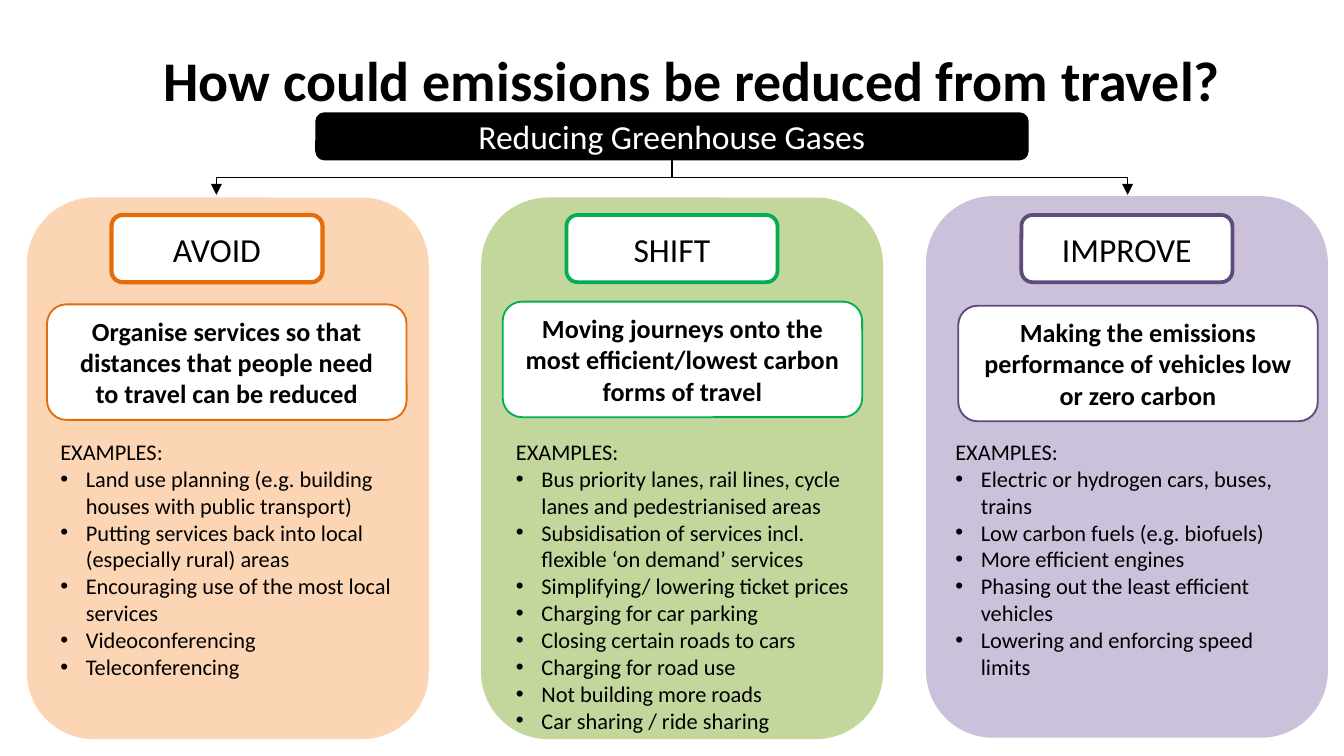
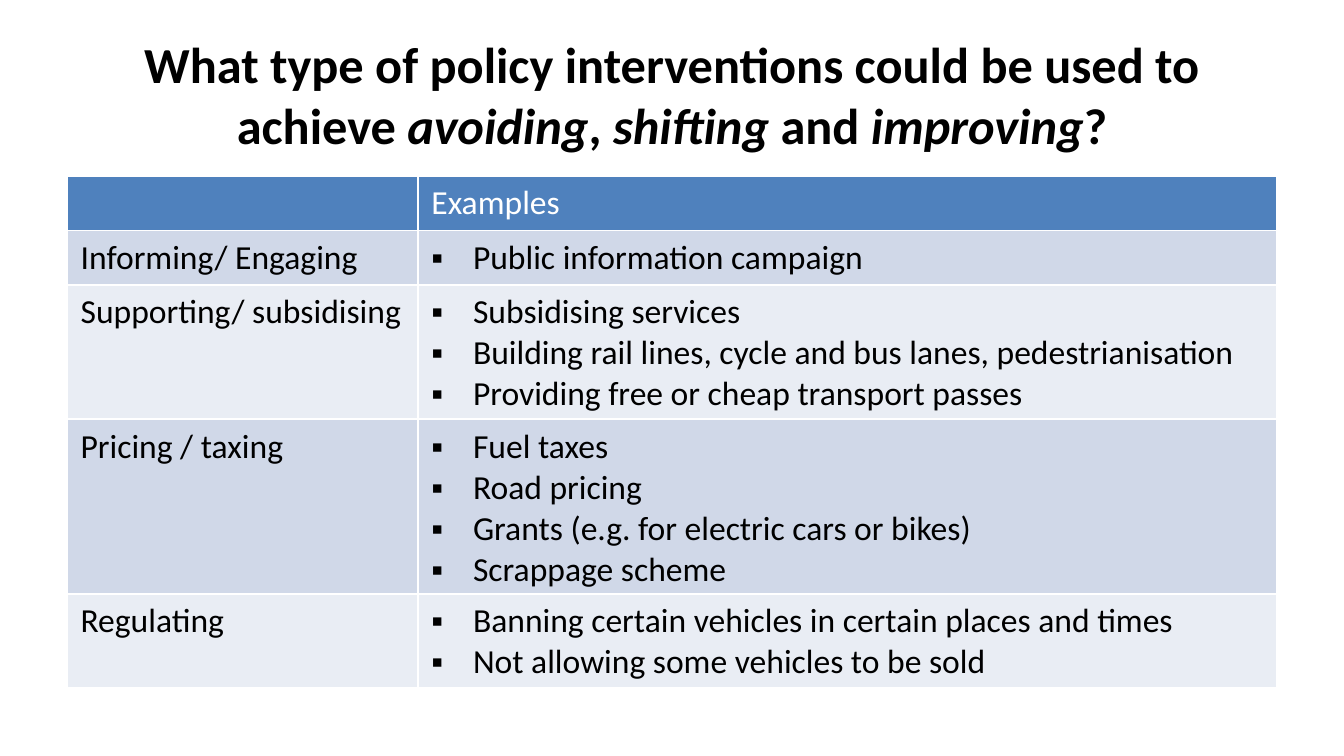
from dataclasses import dataclass

from lxml import etree
from pptx import Presentation
from pptx.dml.color import RGBColor
from pptx.enum.shapes import MSO_CONNECTOR, MSO_SHAPE
from pptx.enum.text import MSO_ANCHOR, MSO_AUTO_SIZE, PP_ALIGN
from pptx.oxml.ns import qn
from pptx.util import Emu, Pt

ROUNDED = MSO_SHAPE.ROUNDED_RECTANGLE
STRAIGHT = MSO_CONNECTOR.STRAIGHT
CENTER, LEFT = PP_ALIGN.CENTER, PP_ALIGN.LEFT
MIDDLE = MSO_ANCHOR.MIDDLE
GROW = MSO_AUTO_SIZE.SHAPE_TO_FIT_TEXT
BOTTOM_SIDE = 2

# Shared style: 200 px to the inch
EMU_PER_PX = 4572
PAGE_WIDTH, PAGE_HEIGHT = 2000, 1125
FONT = "Calibri"
BLACK, WHITE = "000000", "FFFFFF"
HEADER_BLUE = "4F81BD"
BAND_FILLS = ("D0D8E8", "E9EDF4")


@dataclass(frozen=True)
class Rect:
    left: int
    top: int
    width: int
    height: int

    def emu(self) -> tuple[Emu, ...]:
        return tuple(px(side) for side in (self.left, self.top, self.width, self.height))


@dataclass(frozen=True)
class TextStyle:
    size: float
    color: str = BLACK
    bold: bool = False
    align: PP_ALIGN = LEFT


@dataclass(frozen=True)
class Bullet:
    symbol: str
    indent: int


@dataclass(frozen=True)
class Strategy:
    name: str
    statement: str
    examples: tuple[str, ...]
    fill: str
    accent: str
    tag_line: float
    panel_left: int
    panel_top: int
    card_top: int
    examples_rect: Rect


@dataclass(frozen=True)
class Policy:
    kind: str
    examples: tuple[str, ...]


TAG_STYLE = TextStyle(18, align=CENTER)
BAR_STYLE = TextStyle(18, WHITE, align=CENTER)
CARD_STYLE = TextStyle(14, bold=True, align=CENTER)
EXAMPLE_STYLE = TextStyle(12)
CELL_STYLE = TextStyle(18)
HEADER_STYLE = TextStyle(18, WHITE)
DOT = Bullet("•", 38)
SQUARE = Bullet("▪", 62)

STRATEGIES = (
    Strategy(
        "AVOID",
        "Organise services so that distances that people need to travel can be reduced",
        ("Land use planning (e.g. building houses with public transport)",
         "Putting services back into local (especially rural) areas",
         "Encouraging use of the most local services",
         "Videoconferencing",
         "Teleconferencing"),
        "FCD5B5", "E46C0A", 2.25, 40, 294, 453, Rect(70, 642, 536, 384)),
    Strategy(
        "SHIFT",
        "Moving journeys onto the most efficient/lowest carbon forms of travel",
        ("Bus priority lanes, rail lines, cycle lanes and pedestrianised areas",
         "Subsidisation of services incl. flexible ‘on demand’ services",
         "Simplifying/ lowering ticket prices",
         "Charging for car parking",
         "Closing certain roads to cars",
         "Charging for road use",
         "Not building more roads",
         "Car sharing / ride sharing"),
        "C3D69B", "00B050", 2, 716, 294, 449, Rect(748, 642, 548, 464)),
    Strategy(
        "IMPROVE",
        "Making the emissions performance of vehicles low or zero carbon",
        ("Electric or hydrogen cars, buses, trains",
         "Low carbon fuels (e.g. biofuels)",
         "More efficient engines",
         "Phasing out the least efficient vehicles",
         "Lowering and enforcing speed limits"),
        "CCC1DA", "604A7B", 2, 1378, 292, 455, Rect(1402, 642, 548, 464)),
)

POLICIES = (
    Policy("Informing/ Engaging", ("Public information campaign",)),
    Policy("Supporting/ subsidising",
           ("Subsidising services",
            "Building rail lines, cycle and bus lanes, pedestrianisation",
            "Providing free or cheap transport passes")),
    Policy("Pricing / taxing",
           ("Fuel taxes", "Road pricing", "Grants (e.g. for electric cars or bikes)",
            "Scrappage scheme")),
    Policy("Regulating",
           ("Banning certain vehicles in certain places and times",
            "Not allowing some vehicles to be sold")),
)


# Helpers
def px(length: int) -> Emu:
    return Emu(length * EMU_PER_PX)


def rgb(color: str) -> RGBColor:
    return RGBColor.from_string(color)


def fill_solid(target, color: str) -> None:
    target.fill.solid()
    target.fill.fore_color.rgb = rgb(color)


def style_paragraph(para, style: TextStyle, bullet: Bullet | None = None) -> None:
    if bullet:
        properties = para._p.get_or_add_pPr()
        properties.set("marL", str(px(bullet.indent)))
        properties.set("indent", str(-px(bullet.indent)))
        etree.SubElement(properties, qn("a:buFont"), typeface="Arial")
        etree.SubElement(properties, qn("a:buChar"), char=bullet.symbol)
    para.alignment = style.align
    para.font.name = FONT
    para.font.size = Pt(style.size)
    para.font.bold = style.bold
    para.font.color.rgb = rgb(style.color)


def write_lines(frame, lines: tuple[str, ...], style: TextStyle,
                bullet: Bullet | None = None, plain_lines: int = 0) -> None:
    """Fill a text frame; the first plain_lines paragraphs carry no bullet."""
    for index, line in enumerate(lines):
        para = frame.paragraphs[0] if index == 0 else frame.add_paragraph()
        style_paragraph(para, style, bullet if index >= plain_lines else None)
        para.add_run().text = line


def add_title(page, rect: Rect, size: int, spans: tuple[str, ...]) -> None:
    """Write a centred title in which every second span is italic."""
    frame = page.shapes.add_textbox(*rect.emu()).text_frame
    frame.word_wrap = True
    frame.vertical_anchor = MIDDLE
    para = frame.paragraphs[0]
    style_paragraph(para, TextStyle(size, bold=True, align=CENTER))
    for index, text in enumerate(spans):
        span = para.add_run()
        span.text = text
        if index % 2:
            span.font.italic = True


def add_rounded(page, rect: Rect, fill: str, line: str | None = None, line_width: float = 1,
                text: str = "", style: TextStyle = TAG_STYLE):
    box = page.shapes.add_shape(ROUNDED, *rect.emu())
    box.shadow.inherit = False
    fill_solid(box, fill)
    if line:
        box.line.color.rgb = rgb(line)
        box.line.width = Pt(line_width)
    else:
        box.line.fill.background()
    if text:
        box.text_frame.word_wrap = True
        box.text_frame.vertical_anchor = MIDDLE
        write_lines(box.text_frame, (text,), style)
    return box


def add_line(page, start: tuple[int, int], end: tuple[int, int], arrow: bool = False):
    line = page.shapes.add_connector(STRAIGHT, *map(px, start + end))
    line.line.color.rgb = rgb(BLACK)
    line.line.width = Pt(0.75)
    if arrow:
        etree.SubElement(line.line._get_or_add_ln(), qn("a:tailEnd"), type="triangle")
    etree.SubElement(line._element.spPr, qn("a:effectLst"))
    return line


# Slide 1: three strategies
def build_strategies(page) -> None:
    for strategy in reversed(STRATEGIES):
        panel = Rect(strategy.panel_left, strategy.panel_top, 598, 806)
        add_rounded(page, panel, strategy.fill)

    add_title(page, Rect(130, 24, 1800, 188), 30,
              ("How could emissions be reduced from travel?",))
    bar = add_rounded(page, Rect(472, 170, 1056, 66), BLACK, BLACK, 2,
                      "Reducing Greenhouse Gases", BAR_STYLE)

    for index, strategy in enumerate(STRATEGIES):
        add_rounded(page, Rect(166 + index * 677, 320, 314, 100), WHITE, strategy.accent,
                    strategy.tag_line, strategy.name)
        add_rounded(page, Rect(70 + index * 678, strategy.card_top, 535, 172), WHITE,
                    strategy.accent, 1, strategy.statement, CARD_STYLE)
        frame = page.shapes.add_textbox(*strategy.examples_rect.emu()).text_frame
        frame.word_wrap = True
        frame.auto_size = GROW
        write_lines(frame, ("EXAMPLES:",) + strategy.examples, EXAMPLE_STYLE, DOT, 1)

    # Branching arrows
    branch_left, branch_right, branch_top = 322, 1678, 264
    add_line(page, (branch_left, branch_top), (branch_right, branch_top))
    stem = add_line(page, (1000, 236), (1000, branch_top))
    stem.begin_connect(bar, BOTTOM_SIDE)
    for left in (branch_right, branch_left):
        add_line(page, (left, branch_top), (left, 290), arrow=True)


# Slide 2: policy table
def build_policies(page) -> None:
    add_title(page, Rect(100, 46, 1800, 188), 27,
              ("What type of policy interventions could be used to achieve ", "avoiding",
               ", ", "shifting", " and ", "improving", "?"))
    table_rect = Rect(100, 262, 1800, 762)
    holder = page.shapes.add_table(len(POLICIES) + 1, 2, *table_rect.emu())
    table = holder.table
    for column, width in zip(table.columns, (522, 1278)):
        column.width = px(width)
    for row in table.rows:
        row.height = px(81)
    holder.height = px(table_rect.height)

    for cell in table.rows[0].cells:
        fill_solid(cell, HEADER_BLUE)
    write_lines(table.cell(0, 1).text_frame, ("Examples",), HEADER_STYLE)
    for index, policy in enumerate(POLICIES):
        kind, examples = table.rows[index + 1].cells
        for cell in (kind, examples):
            fill_solid(cell, BAND_FILLS[index % 2])
        write_lines(kind.text_frame, (policy.kind,), CELL_STYLE)
        write_lines(examples.text_frame, policy.examples, CELL_STYLE, SQUARE)


def main() -> None:
    deck = Presentation()
    deck.slide_width, deck.slide_height = px(PAGE_WIDTH), px(PAGE_HEIGHT)
    blank = deck.slide_layouts[6]
    for build in (build_strategies, build_policies):
        build(deck.slides.add_slide(blank))
    deck.save("out.pptx")


if __name__ == "__main__":
    main()
